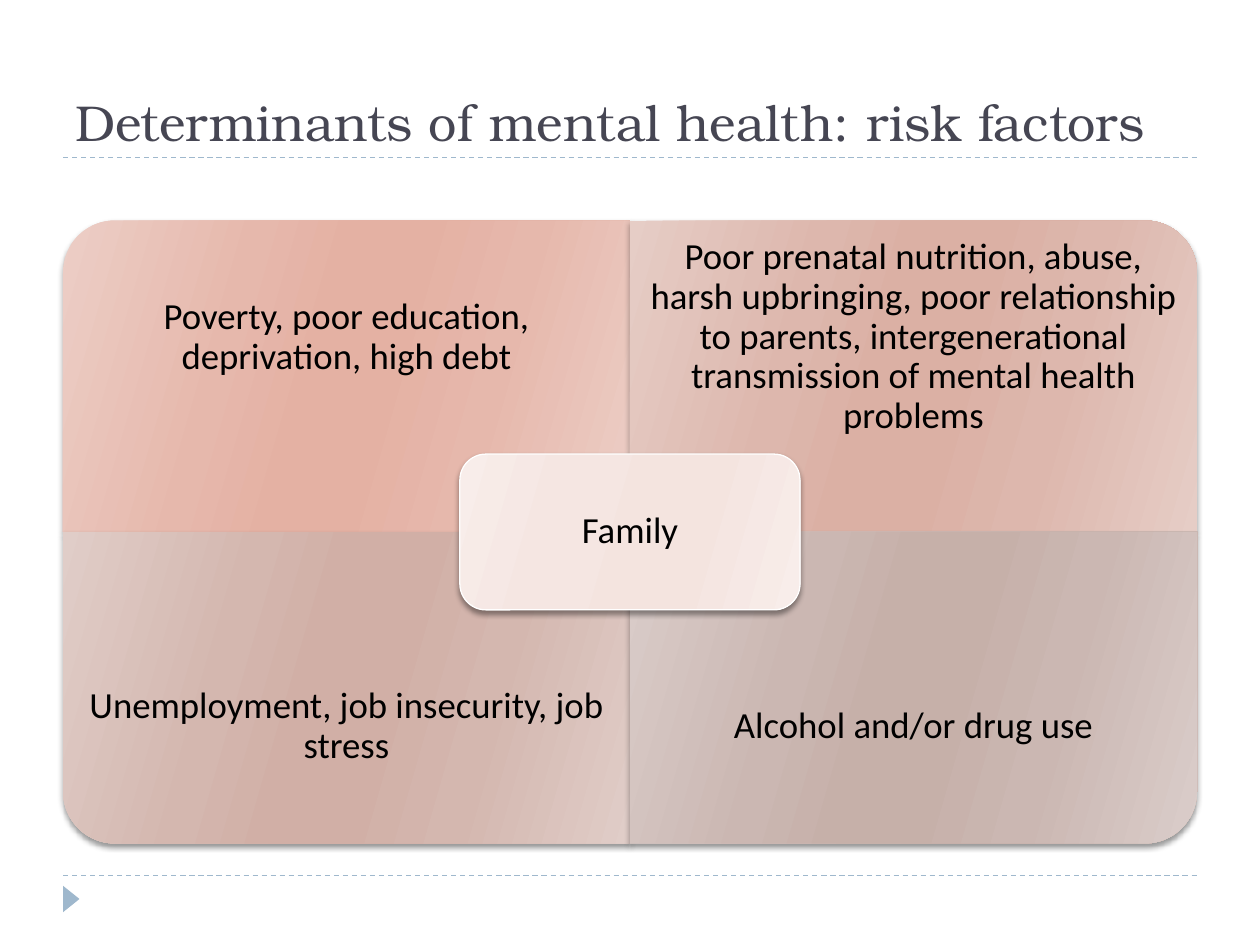
import pptx
import pptx.dml.color
import pptx.enum.dml
import pptx.enum.shapes
import pptx.enum.text
import pptx.oxml
import pptx.util
from lxml import etree

Pt = pptx.util.Pt
SHAPES = pptx.enum.shapes.MSO_SHAPE
ANCHOR = pptx.enum.text.MSO_ANCHOR
DRAWING_NS = "http://schemas.openxmlformats.org/drawingml/2006/main"
STOPS = (0, 30, 45, 55, 73, 100)


def color(hex_string):
    return pptx.dml.color.RGBColor.from_string(hex_string)


class FactorSlide:
    title_font = "TeX Gyre Bonum"
    body_font = "Calibri"
    title_color = "464653"
    accent = "9FB8CD"
    text_color = "000000"

    def __init__(self, slide):
        self.slide = slide

    def title(self, text, left, top, width, height):
        title = self.slide.shapes.title
        title.left, title.top = Pt(left), Pt(top)
        title.width, title.height = Pt(width), Pt(height)
        frame = title.text_frame
        frame.text = text
        frame.word_wrap = True
        frame.vertical_anchor = ANCHOR.BOTTOM
        paragraph = frame.paragraphs[0]
        paragraph.alignment = pptx.enum.text.PP_ALIGN.LEFT
        self.format_font(paragraph.font, self.title_font, 28.8, self.title_color)

    def format_font(self, font, name, size, hex_string):
        font.name, font.size = name, Pt(size)
        font.color.rgb = color(hex_string)

    def rule(self, left, right, y):
        rule = self.slide.shapes.add_connector(
            pptx.enum.shapes.MSO_CONNECTOR.STRAIGHT,
            Pt(left), Pt(y), Pt(right), Pt(y))
        rule.line.color.rgb = color(self.accent)
        rule.line.width = Pt(0.75)
        rule.line.dash_style = pptx.enum.dml.MSO_LINE.DASH
        etree.SubElement(rule._element.spPr, f"{{{DRAWING_NS}}}effectLst")

    def shape(self, preset, center_x, center_y, width, height, rotation=0):
        # Quarter turns swap the sides of the unrotated frame
        if rotation % 180:
            width, height = height, width
        shape = self.slide.shapes.add_shape(
            preset, Pt(center_x - width / 2), Pt(center_y - height / 2),
            Pt(width), Pt(height))
        shape.rotation = rotation
        shape.shadow.inherit = False
        shape.line.fill.background()
        return shape

    def marker(self, center_x, center_y, width, height):
        marker = self.shape(SHAPES.ISOSCELES_TRIANGLE, center_x, center_y,
                            width, height, 90)
        marker.fill.solid()
        marker.fill.fore_color.rgb = color(self.accent)

    def panel(self, preset, center_x, center_y, width, height, shades, rotation=0):
        panel = self.shape(preset, center_x, center_y, width, height, rotation)
        edge, middle, core = shades
        stops = "".join(
            f'<a:gs pos="{stop * 1000}"><a:srgbClr val="{shade}"/></a:gs>'
            for stop, shade in zip(STOPS, (edge, middle, core, core, middle, edge)))
        gradient = pptx.oxml.parse_xml(
            f'<a:gradFill xmlns:a="{DRAWING_NS}" rotWithShape="0">'
            f'<a:gsLst>{stops}</a:gsLst><a:lin ang="960000" scaled="0"/></a:gradFill>')
        properties = panel._element.spPr
        properties.find(f"{{{DRAWING_NS}}}prstGeom").addnext(gradient)
        effects = properties.find(f"{{{DRAWING_NS}}}effectLst")
        effects.append(pptx.oxml.parse_xml(
            f'<a:outerShdw xmlns:a="{DRAWING_NS}" blurRad="38100" dist="25400" '
            'dir="5400000" rotWithShape="0"><a:srgbClr val="000000">'
            '<a:alpha val="40000"/></a:srgbClr></a:outerShdw>'))
        return panel

    def label(self, text, left, top, width, height, inset):
        box = self.slide.shapes.add_textbox(Pt(left), Pt(top), Pt(width), Pt(height))
        frame = box.text_frame
        frame.text = text
        frame.word_wrap = True
        frame.vertical_anchor = ANCHOR.MIDDLE
        frame.margin_left = frame.margin_right = Pt(inset)
        frame.margin_top = frame.margin_bottom = Pt(inset)
        paragraph = frame.paragraphs[0]
        paragraph.alignment = pptx.enum.text.PP_ALIGN.CENTER
        paragraph.line_spacing = 0.9
        self.format_font(paragraph.font, self.body_font, 21, self.text_color)


def main():
    deck = pptx.Presentation()
    deck.slide_width, deck.slide_height = Pt(720), Pt(540)
    page = FactorSlide(deck.slides.add_slide(deck.slide_layouts[5]))
    left, right = 36, 684

    # Frame: rules, corner marker and title
    page.rule(left, right, 500.4)
    page.rule(left, right, 90)
    page.marker(40.7, 513.7, 9.4, 15.1)
    page.title("Determinants of mental health: risk factors",
               left, 12.24, right - left, 77.76)

    # Four risk factors: column, row, rotation, shades, wording
    top, width, height = 126, 324, 178
    label_height = height * 0.75
    factors = [
        (0, 0, 270, ("ECCEC6", "E6B8AC", "E4B1A3"),
         "Poverty, poor education, deprivation, high debt"),
        (1, 0, 0, ("E6CDC6", "DDB7AD", "DBB0A4"),
         "Poor prenatal nutrition, abuse, harsh upbringing, poor relationship "
         "to parents, intergenerational transmission of mental health problems"),
        (0, 1, 180, ("E0CDC8", "D4B7AF", "D1AFA6"),
         "Unemployment, job insecurity, job stress"),
        (1, 1, 90, ("DACDCA", "CBB7B2", "C6B0A9"),
         "Alcohol and/or drug use"),
    ]
    for column, row, rotation, shades, wording in factors:
        x, y = left + column * width, top + row * height
        page.panel(SHAPES.ROUND_1_RECTANGLE, x + width / 2, y + height / 2,
                   width, height, shades, rotation)
        # Labels keep to the outer three quarters, clear of the centre
        page.label(wording, x, y + row * (height - label_height),
                   width, label_height, 11.5)

    # Centre: family
    center_x, center_y = left + width, top + height
    family_width, family_height, border = width * 0.6, height / 2, 4.3
    family = page.panel(SHAPES.ROUNDED_RECTANGLE, center_x, center_y,
                        family_width, family_height,
                        ("F8EDEA", "F5E6E2", "F4E4DF"))
    family.line.color.rgb = color("FFFFFF")
    family.line.width = Pt(0.75)
    page.label("Family", center_x - family_width / 2 + border,
               center_y - family_height / 2 + border,
               family_width - 2 * border, family_height - 2 * border, 6.5)

    deck.save("out.pptx")


if __name__ == "__main__":
    main()
